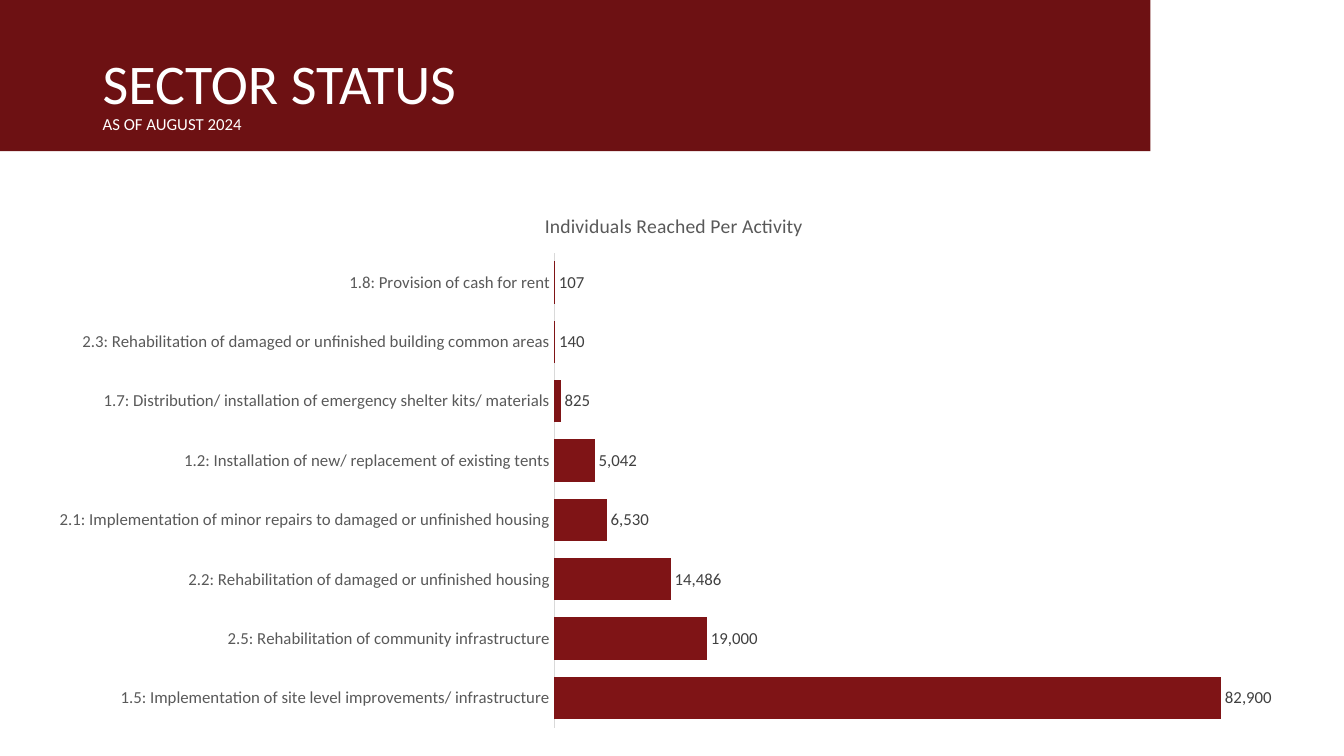
from lxml import etree
from pptx import Presentation
from pptx.chart.data import CategoryChartData
from pptx.dml.color import RGBColor
from pptx.enum.chart import XL_CHART_TYPE, XL_LABEL_POSITION, XL_TICK_MARK
from pptx.enum.shapes import MSO_SHAPE
from pptx.enum.text import MSO_ANCHOR
from pptx.oxml.ns import qn
from pptx.util import Inches, Pt

BAR_CLUSTERED = XL_CHART_TYPE.BAR_CLUSTERED
OUTSIDE_END = XL_LABEL_POSITION.OUTSIDE_END
NO_TICK = XL_TICK_MARK.NONE
RECTANGLE = MSO_SHAPE.RECTANGLE
MIDDLE = MSO_ANCHOR.MIDDLE

# Content
HEADING = [("SECTOR STATUS", 40), ("AS OF AUGUST 2024", 12)]
CHART_TITLE = "Individuals Reached Per Activity"
ACTIVITIES = [  # from the bottom bar to the top one
    ("1.5: Implementation of site level improvements/ infrastructure", 82900),
    ("2.5: Rehabilitation of community infrastructure", 19000),
    ("2.2: Rehabilitation of damaged or unfinished housing", 14486),
    ("2.1: Implementation of minor repairs to damaged or unfinished housing", 6530),
    ("1.2: Installation of new/ replacement of existing tents", 5042),
    ("1.7: Distribution/ installation of emergency shelter kits/ materials", 825),
    ("2.3: Rehabilitation of damaged or unfinished building common areas", 140),
    ("1.8: Provision of cash for rent", 107),
]
COLORS = {
    "banner": "6D1113", "bar": "7F1416", "heading": "FFFFFF", "text": "000000",
    "axis_text": "595959", "label": "404040", "axis_line": "D9D9D9",
}
FONT = "Calibri"


def color(name):
    return RGBColor.from_string(COLORS[name])


def style(font, size, color_name):
    font.name = FONT
    font.size = Pt(size)
    font.bold = False
    font.color.rgb = color(color_name)


def place(element, index, **settings):
    """Give a chart part a manual layout, in fractions of the chart."""
    for old in element.findall(qn("c:layout")):
        element.remove(old)
    layout = etree.Element(qn("c:layout"))
    manual = etree.SubElement(layout, qn("c:manualLayout"))
    for tag, value in settings.items():
        etree.SubElement(manual, qn("c:" + tag)).set("val", str(value))
    element.insert(index, layout)


def add_banner(page):
    banner = page.shapes.add_shape(RECTANGLE, 0, 0, Inches(11.41), Inches(1.5))
    banner.shadow.inherit = False
    banner.fill.solid()
    banner.fill.fore_color.rgb = color("banner")
    banner.line.fill.background()

    box = page.shapes.add_textbox(Inches(0.92), Inches(0.4), Inches(11.5), Inches(1.09))
    frame = box.text_frame
    frame.word_wrap = True
    frame.vertical_anchor = MIDDLE
    para = frame.paragraphs[0]
    para.line_spacing = 0.9
    for number, (text, size) in enumerate(HEADING):
        if number:
            para.add_line_break()
        span = para.add_run()
        span.text = text
        style(span.font, size, "heading")


def add_activity_chart(page):
    data = CategoryChartData(number_format="#,##0")
    data.categories = [name for name, _ in ACTIVITIES]
    data.add_series("Series 1", [reached for _, reached in ACTIVITIES])
    chart = page.shapes.add_chart(
        BAR_CLUSTERED, Inches(0.33), Inches(1.85), Inches(12.6), Inches(5.48), data
    ).chart
    style(chart.font, 12, "text")
    chart.has_legend = False

    # Title
    chart.has_title = True
    para = chart.chart_title.text_frame.paragraphs[0]
    para.text = CHART_TITLE
    style(para.font, 14, "axis_text")
    place(chart.chart_title._element, 1, xMode="edge", yMode="edge", x=0.4, y=0.04)

    # Axes
    axis = chart.category_axis
    axis.major_tick_mark = NO_TICK
    axis.format.line.color.rgb = color("axis_line")
    axis.format.line.width = Pt(0.75)
    style(axis.tick_labels.font, 12, "axis_text")
    values = chart.value_axis
    values.minimum_scale = 0
    values.maximum_scale = 90000
    values.has_major_gridlines = False
    values.visible = False

    # Bars and their labels
    plot = chart.plots[0]
    plot.vary_by_categories = False
    plot.gap_width = 40
    bars = plot.series[0]
    bars.invert_if_negative = False
    bars.format.fill.solid()
    bars.format.fill.fore_color.rgb = color("bar")
    labels = bars.data_labels
    labels.show_value = True
    labels.number_format = "#,##0"
    labels.number_format_is_linked = False
    labels.position = OUTSIDE_END
    style(labels.font, 12, "label")
    place(chart._chartSpace.chart.plotArea, 0, layoutTarget="inner",
          xMode="edge", yMode="edge", x=0.41, y=0.12, w=0.57, h=0.86)


def main():
    deck = Presentation()
    deck.slide_width = Inches(13.33)
    deck.slide_height = Inches(7.5)
    page = deck.slides.add_slide(deck.slide_layouts[6])
    add_banner(page)
    add_activity_chart(page)
    deck.save("out.pptx")


if __name__ == "__main__":
    main()
